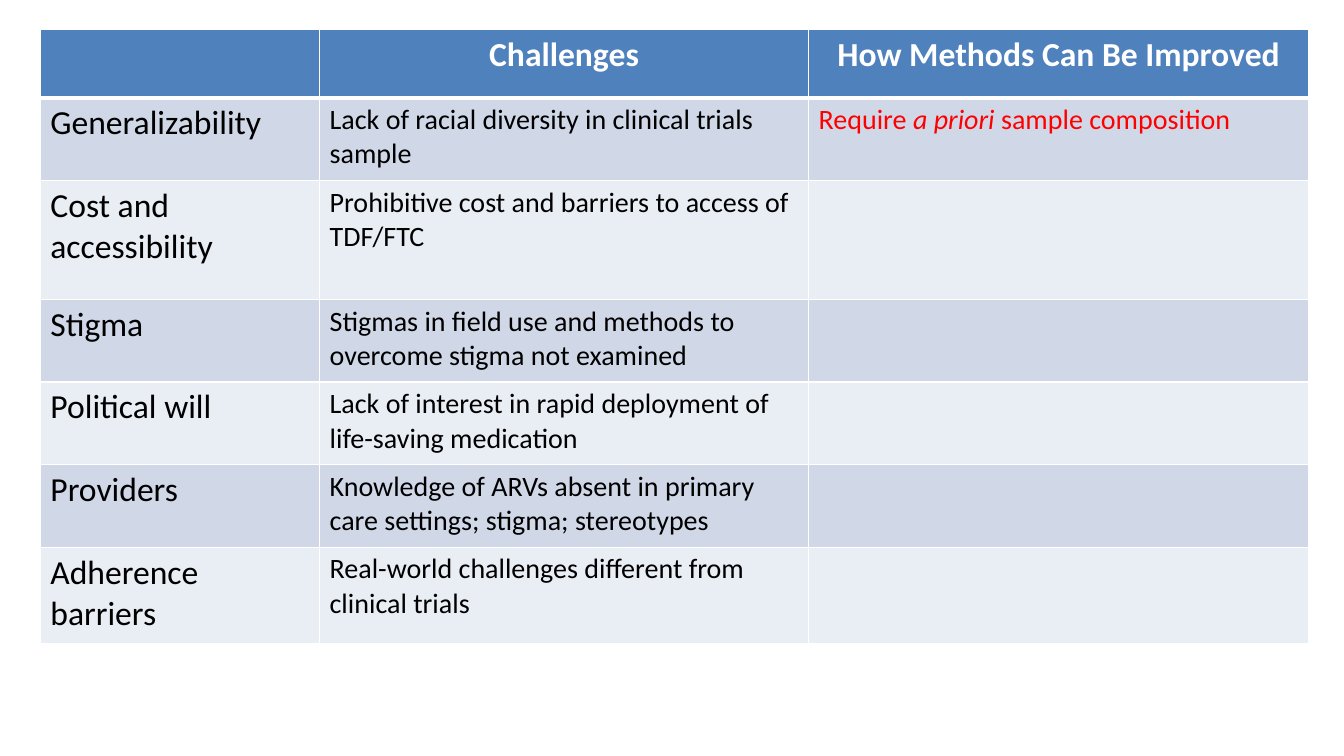
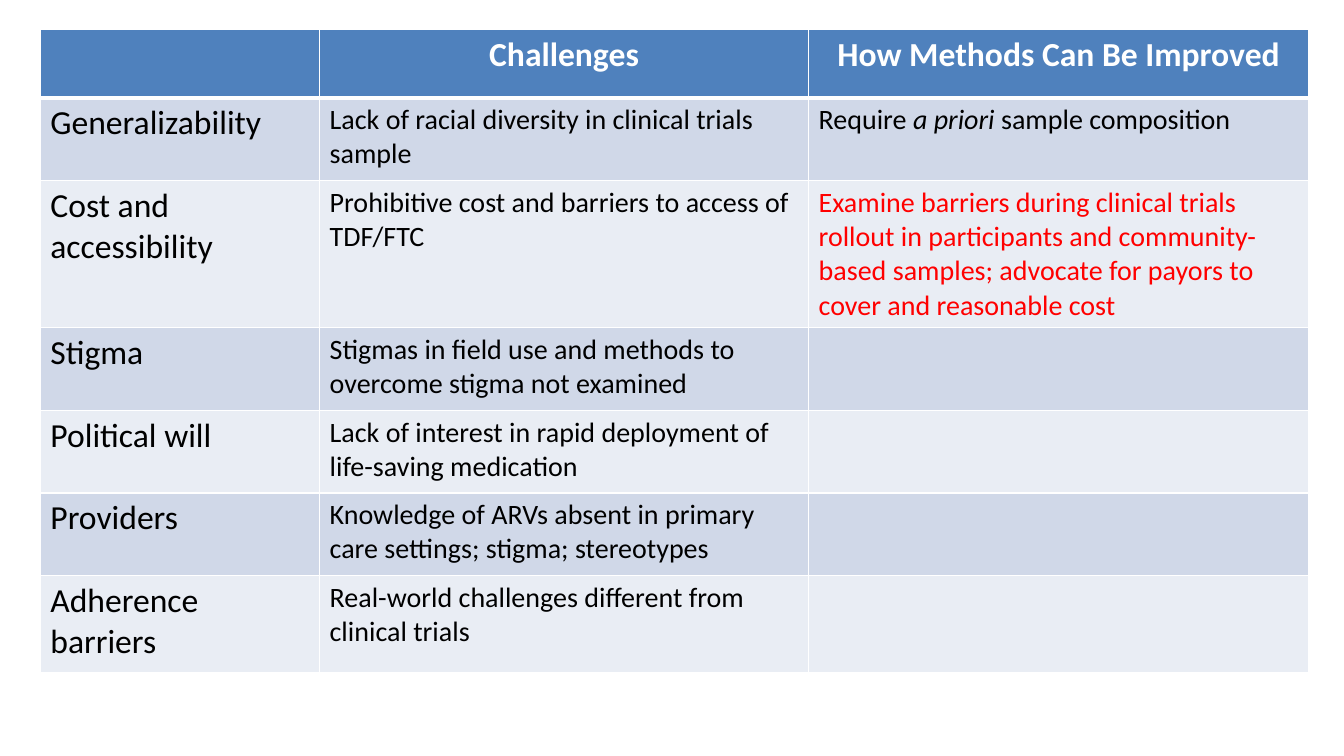
from dataclasses import dataclass

from lxml import etree
from pptx import Presentation
from pptx.dml.color import RGBColor
from pptx.enum import text
from pptx.oxml import ns
from pptx.util import Inches, Pt


@dataclass(frozen=True)
class Theme:
    font: str = "Calibri"
    label_size: int = 24
    body_size: int = 20
    header: str = "4F81BD"
    bands: tuple = ("D0D8E8", "E9EDF4")
    white: str = "FFFFFF"
    ink: str = "000000"
    accent: str = "FF0000"
    rule: int = 1
    header_rule: int = 3


T = Theme()

HEADINGS = ("", "Challenges", "How Methods Can Be Improved")
CHALLENGES = [
    ("Generalizability", "Lack of racial diversity in clinical trials sample"),
    ("Cost and accessibility", "Prohibitive cost and barriers to access of TDF/FTC"),
    ("Stigma", "Stigmas in field use and methods to overcome stigma not examined"),
    ("Political will", "Lack of interest in rapid deployment of life-saving medication"),
    ("Providers", "Knowledge of ARVs absent in primary care settings; stigma; stereotypes"),
    ("Adherence barriers", "Real-world challenges different from clinical trials"),
]
IMPROVEMENTS = [
    [("Require ", False), ("a priori ", True), ("sample composition", False)],
    [("Examine barriers during clinical trials rollout in participants and "
      "community-based samples; advocate for payors to cover and reasonable cost", False)],
]
LEFT, TOP = 0.4, 0.29
COLUMNS = (2.77, 4.85, 4.96)
ROWS = (0.68, 0.82, 1.18, 0.82, 0.82, 0.82, 0.96)


def add_borders(cell, top, bottom):
    tcPr = cell._tc.get_or_add_tcPr()
    for side, width in (("L", T.rule), ("R", T.rule), ("T", top), ("B", bottom)):
        ln = etree.SubElement(tcPr, ns.qn(f"a:ln{side}"), w=str(Pt(width)))
        fill = etree.SubElement(ln, ns.qn("a:solidFill"))
        etree.SubElement(fill, ns.qn("a:srgbClr"), val=T.white)


def write(cell, runs, size, color, bold=False, align=text.PP_ALIGN.LEFT):
    p = cell.text_frame.paragraphs[0]
    p.alignment = align
    p.font.size = Pt(size)
    for words, italic in runs:
        r = p.add_run()
        r.text = words
        r.font.name = T.font
        r.font.size = Pt(size)
        r.font.bold = bold
        r.font.italic = italic
        r.font.color.rgb = RGBColor.from_string(color)


def style_cells(table):
    for i in range(len(ROWS)):
        color = T.bands[(i - 1) % 2] if i else T.header
        top = T.header_rule if i == 1 else T.rule
        bottom = T.rule if i else T.header_rule
        for cell in table.rows[i].cells:
            add_borders(cell, top, bottom)
            cell.fill.solid()
            cell.fill.fore_color.rgb = RGBColor.from_string(color)


def add_challenge_slide(prs, shown):
    s = prs.slides.add_slide(prs.slide_layouts[6])
    table = s.shapes.add_table(len(ROWS), len(COLUMNS), Inches(LEFT), Inches(TOP),
                               Inches(sum(COLUMNS)), Inches(sum(ROWS))).table
    for column, width in zip(table.columns, COLUMNS):
        column.width = Inches(width)
    for row, height in zip(table.rows, ROWS):
        row.height = Inches(height)
    style_cells(table)

    for j, heading in enumerate(HEADINGS):
        if heading:
            write(table.cell(0, j), [(heading, False)], T.label_size, T.white,
                  bold=True, align=text.PP_ALIGN.CENTER)
    for i, (label, challenge) in enumerate(CHALLENGES, 1):
        write(table.cell(i, 0), [(label, False)], T.label_size, T.ink)
        write(table.cell(i, 1), [(challenge, False)], T.body_size, T.ink)
    for i, runs in enumerate(IMPROVEMENTS[:shown], 1):
        write(table.cell(i, 2), runs, T.body_size, T.accent if i == shown else T.ink)


def main():
    prs = Presentation()
    prs.slide_width, prs.slide_height = Inches(13.33), Inches(7.5)
    for shown in range(1, len(IMPROVEMENTS) + 1):
        add_challenge_slide(prs, shown)
    prs.save("out.pptx")


if __name__ == "__main__":
    main()
